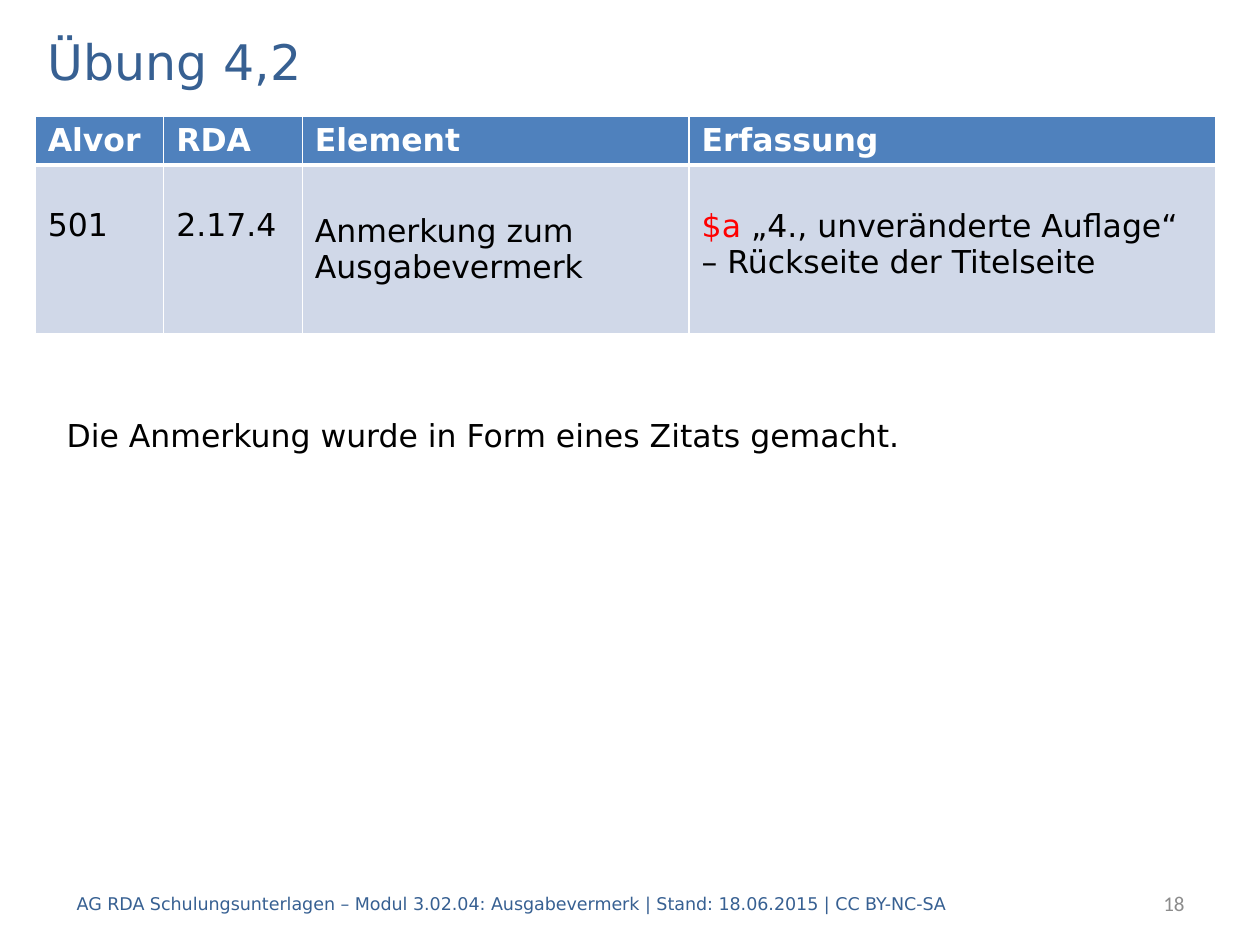
"""Build the exercise slide with its cataloguing table."""
from dataclasses import dataclass
from typing import Optional

from lxml import etree
from pptx import Presentation
from pptx import util as u
from pptx.dml.color import RGBColor
from pptx.enum import text
from pptx.oxml import ns


@dataclass(frozen=True)
class Theme:
    face: str = "DejaVu Sans"
    plain: str = "Calibri"
    navy: str = "376092"
    head: str = "4F81BD"
    band: str = "D0D8E8"
    white: str = "FFFFFF"
    black: str = "000000"
    red: str = "FF0000"
    grey: str = "8C8C8C"
    large: int = 28
    body: int = 18
    page: int = 12
    foot: int = 10


@dataclass(frozen=True)
class Entry:
    label: str
    width: float
    value: str
    top: float = 0.05
    base: float = 0.05
    lead: Optional[int] = None
    anchor: text.MSO_ANCHOR = text.MSO_ANCHOR.MIDDLE
    code: str = ""


@dataclass(frozen=True)
class Note:
    words: str
    left: float
    top: float
    width: float
    size: int
    color: str
    face: str = Theme.face
    align: text.PP_ALIGN = text.PP_ALIGN.LEFT
    anchor: text.MSO_ANCHOR = text.MSO_ANCHOR.MIDDLE


LOOK = Theme()
ENTRIES = [
    Entry("Alvor", 1.02, "501", base=0.36, lead=16),
    Entry("RDA", 1.10, "2.17.4", base=0.36, lead=16),
    Entry("Element", 3.07, "Anmerkung zum Ausgabevermerk"),
    Entry("Erfassung", 4.18, "„4., unveränderte Auflage“ – Rückseite der Titelseite",
          top=0.34, anchor=text.MSO_ANCHOR.TOP, code="$a "),
]
NOTES = [
    Note("AG RDA Schulungsunterlagen – Modul 3.02.04: Ausgabevermerk | "
         "Stand: 18.06.2015 | CC BY-NC-SA", 0.51, 6.97, 8.35, LOOK.foot, LOOK.navy),
    Note("18", 7.91, 6.97, 1.59, LOOK.page, LOOK.grey, LOOK.plain, text.PP_ALIGN.RIGHT),
    Note("Die Anmerkung wurde in Form eines Zitats gemacht.", 0.43, 3.25, 6.91,
         LOOK.body, LOOK.black, anchor=text.MSO_ANCHOR.TOP),
]


def style(run, size: int, color: str, face: str = LOOK.face, bold: bool = False) -> None:
    """Set the font of a run."""
    run.font.name = face
    run.font.size = u.Pt(size)
    run.font.bold = bold
    run.font.color.rgb = RGBColor.from_string(color)


def edge(cell, base: int) -> None:
    """Give a cell white borders with a chosen bottom width."""
    props = cell._tc.get_or_add_tcPr()
    for side, width in (("L", 1), ("R", 1), ("T", 1), ("B", base)):
        line = etree.SubElement(props, ns.qn(f"a:ln{side}"), w=str(u.Pt(width)))
        fill = etree.SubElement(line, ns.qn("a:solidFill"))
        etree.SubElement(fill, ns.qn("a:srgbClr"), val=LOOK.white)


def paint(cell, color: str, base: int) -> None:
    """Set the borders and fill of a cell."""
    edge(cell, base)
    cell.fill.solid()
    cell.fill.fore_color.rgb = RGBColor.from_string(color)


def draw_head(cell, entry: Entry) -> None:
    """Fill a header cell."""
    paint(cell, LOOK.head, 3)
    cell.text_frame.text = entry.label
    style(cell.text_frame.paragraphs[0].runs[0], LOOK.body, LOOK.white, bold=True)


def draw_value(cell, entry: Entry) -> None:
    """Fill a value cell."""
    paint(cell, LOOK.band, 1)
    cell.vertical_anchor = entry.anchor
    cell.margin_top = u.Inches(entry.top)
    cell.margin_bottom = u.Inches(entry.base)
    para = cell.text_frame.paragraphs[0]
    para.space_before = para.space_after = u.Pt(6)
    if entry.lead:
        para.line_spacing = u.Pt(entry.lead)
    for words, color in ((entry.code, LOOK.red), (entry.value, LOOK.black)):
        if words:
            run = para.add_run()
            run.text = words
            style(run, LOOK.body, color)


def draw_table(slide, entries: list[Entry]) -> None:
    """Draw the table of entries."""
    heights = (0.38, 1.34)
    width = sum(entry.width for entry in entries)
    grid = slide.shapes.add_table(
        len(heights), len(entries), u.Inches(0.28), u.Inches(0.92),
        u.Inches(width), u.Inches(sum(heights))).table
    for row, height in zip(grid.rows, heights):
        row.height = u.Inches(height)
    for col, entry in enumerate(entries):
        grid.columns[col].width = u.Inches(entry.width)
        draw_head(grid.cell(0, col), entry)
        draw_value(grid.cell(1, col), entry)


def draw_title(slide, words: str) -> None:
    """Place the title."""
    title = slide.shapes.title
    title.left, title.top = u.Inches(0.28), u.Inches(0.2)
    title.width, title.height = u.Inches(9.45), u.Inches(0.56)
    frame = title.text_frame
    frame.text = words
    frame.vertical_anchor = text.MSO_ANCHOR.MIDDLE
    frame.paragraphs[0].alignment = text.PP_ALIGN.LEFT
    style(frame.paragraphs[0].runs[0], LOOK.large, LOOK.navy)


def draw_note(slide, note: Note) -> None:
    """Draw a single line of text."""
    box = slide.shapes.add_textbox(u.Inches(note.left), u.Inches(note.top),
                                   u.Inches(note.width), u.Inches(0.4))
    frame = box.text_frame
    frame.word_wrap = True
    frame.vertical_anchor = note.anchor
    frame.text = note.words
    para = frame.paragraphs[0]
    para.alignment = note.align
    style(para.runs[0], note.size, note.color, note.face)


def main() -> None:
    """Build and save the slide."""
    deck = Presentation()
    deck.slide_width, deck.slide_height = u.Inches(10), u.Inches(7.5)
    slide = deck.slides.add_slide(deck.slide_layouts[5])
    draw_title(slide, "Übung 4,2")
    draw_table(slide, ENTRIES)
    for note in NOTES:
        draw_note(slide, note)
    deck.save("out.pptx")


if __name__ == "__main__":
    main()
